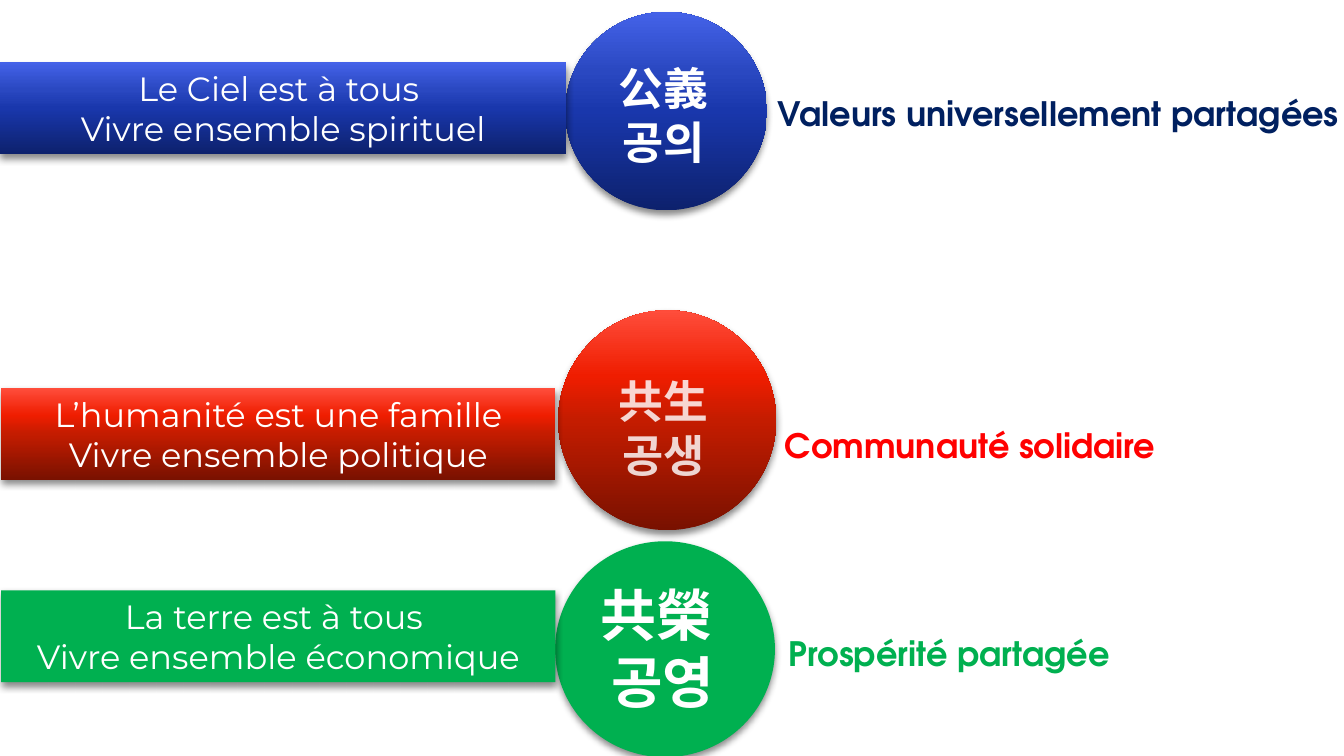
import copy
from dataclasses import dataclass

import pptx
import pptx.dml.color
import pptx.enum.shapes
import pptx.enum.text
import pptx.oxml
import pptx.oxml.ns
import pptx.util

Cm = pptx.util.Cm
Shapes = pptx.enum.shapes.MSO_SHAPE
Align = pptx.enum.text.PP_ALIGN
Anchor = pptx.enum.text.MSO_ANCHOR
qn = pptx.oxml.ns.qn


@dataclass(frozen=True)
class Theme:
    heading_font: str = "TeX Gyre Adventor"
    body_font: str = "Montserrat"
    body_size: int = 24
    symbol_size: int = 32
    large_symbol_size: int = 40
    white: str = "FFFFFF"
    navy: str = "002060"
    red: str = "FF0000"
    green: str = "00B050"
    blue_shades: tuple = ("0D216D", "1937AC", "2A48C1", "4462E8")
    red_shades: tuple = ("791100", "C41C00", "EF1D00", "FF4D3B")
    green_shades: tuple = ("00B050",)
    shade_positions: tuple = (0, 0.5, 0.7, 1)


theme = Theme()
SHADOW = (
    f'<a:outerShdw {pptx.oxml.ns.nsdecls("a")} blurRad="63500" dist="38100" dir="5400000" '
    'algn="ctr" rotWithShape="0"><a:srgbClr val="000000"><a:alpha val="45000"/></a:srgbClr>'
    '</a:outerShdw>'
)


def write_text(shape, lines, *, size, font, color, bold=False, align=Align.CENTER,
               anchor=Anchor.TOP, wrap=True, opacity=100):
    frame = shape.text_frame
    frame.word_wrap = wrap
    frame.vertical_anchor = anchor
    frame.auto_size = pptx.enum.text.MSO_AUTO_SIZE.SHAPE_TO_FIT_TEXT
    for index, line in enumerate(lines):
        paragraph = frame.add_paragraph() if index else frame.paragraphs[0]
        paragraph.alignment = align
        run = paragraph.add_run()
        run.text = line
        run.font.name = font
        run.font.size = pptx.util.Pt(size)
        run.font.bold = bold
        run.font.color.rgb = pptx.dml.color.RGBColor.from_string(color)
        if opacity < 100:
            color_element = run.font.fill._xPr.find(".//" + qn("a:srgbClr"))
            color_element.append(pptx.oxml.parse_xml(
                f'<a:alpha {pptx.oxml.ns.nsdecls("a")} val="{opacity * 1000}"/>'))


def add_shaded_shape(slide, kind, box, shades):
    """Add a shape with a soft shadow, filled plain or from bottom to top with shades."""
    shape = slide.shapes.add_shape(kind, *map(Cm, box))
    shape.line.fill.background()
    properties = shape._element.spPr
    if len(shades) == 1:
        shape.fill.solid()
        shape.fill.fore_color.rgb = pptx.dml.color.RGBColor.from_string(shades[0])
    else:
        shape.fill.gradient()
        shape.fill.gradient_angle = 90
        stop_list = properties.find(".//" + qn("a:gsLst"))
        for _ in range(len(shades) - len(stop_list)):
            stop_list.append(copy.deepcopy(stop_list[0]))
        for stop, shade, position in zip(shape.fill.gradient_stops, shades, theme.shade_positions):
            stop.color.rgb = pptx.dml.color.RGBColor.from_string(shade)
            stop.position = position
    shape.shadow.inherit = False
    properties.find(qn("a:effectLst")).append(pptx.oxml.parse_xml(SHADOW))
    return shape


presentation = pptx.Presentation()
presentation.slide_width = Cm(33.87)
presentation.slide_height = Cm(19.05)
slide = presentation.slides.add_slide(presentation.slide_layouts[6])

# Boxes are left, top, width, height in centimetres.
values = [
    dict(shades=theme.green_shades, color=theme.green,
         circle=(13.99, 13.64, 5.54, 5.44),
         symbol_box=(13.89, 14.5, 5.64, 3.68), symbols=("共榮 ", "공영"),
         symbol_size=theme.large_symbol_size, opacity=100,
         bar=(0.03, 14.88, 13.97, 2.31),
         motto=("La terre est à tous ", "Vivre ensemble économique"),
         label_box=(19.63, 15.82, 8.81, 1.27), label="Prospérité partagée"),
    dict(shades=theme.red_shades, color=theme.red,
         circle=(14.07, 7.82, 5.49, 5.54),
         symbol_box=(14.63, 9.3, 4.19, 3), symbols=("共生", "공생"),
         symbol_size=theme.symbol_size, opacity=81,
         bar=(0.03, 9.78, 13.97, 2.31),
         motto=("L’humanité est une famille", "Vivre ensemble politique"),
         label_box=(19.53, 10.57, 9.98, 1.27), label="Communauté solidaire"),
    dict(shades=theme.blue_shades, color=theme.navy,
         circle=(14.25, 0.3, 5.08, 5),
         symbol_box=(14.63, 1.4, 4.19, 3), symbols=("公義", "공의"),
         symbol_size=theme.symbol_size, opacity=100,
         bar=(0, 1.57, 14.27, 2.31),
         motto=("Le Ciel est à tous ", "Vivre ensemble spirituel"),
         label_box=(19.35, 2.21, 14.78, 1.27), label="Valeurs universellement partagées"),
]

for value in values:
    add_shaded_shape(slide, Shapes.OVAL, value["circle"], value["shades"])
    symbol_box = slide.shapes.add_textbox(*map(Cm, value["symbol_box"]))
    write_text(symbol_box, value["symbols"], size=value["symbol_size"], font=theme.heading_font,
               color=theme.white, bold=True, opacity=value["opacity"])
    bar = add_shaded_shape(slide, Shapes.RECTANGLE, value["bar"], value["shades"])
    write_text(bar, value["motto"], size=theme.body_size, font=theme.body_font,
               color=theme.white, anchor=Anchor.MIDDLE)
    label_box = slide.shapes.add_textbox(*map(Cm, value["label_box"]))
    write_text(label_box, [value["label"]], size=theme.body_size, font=theme.heading_font,
               color=value["color"], bold=True, align=Align.LEFT, wrap=False)

presentation.save("out.pptx")
